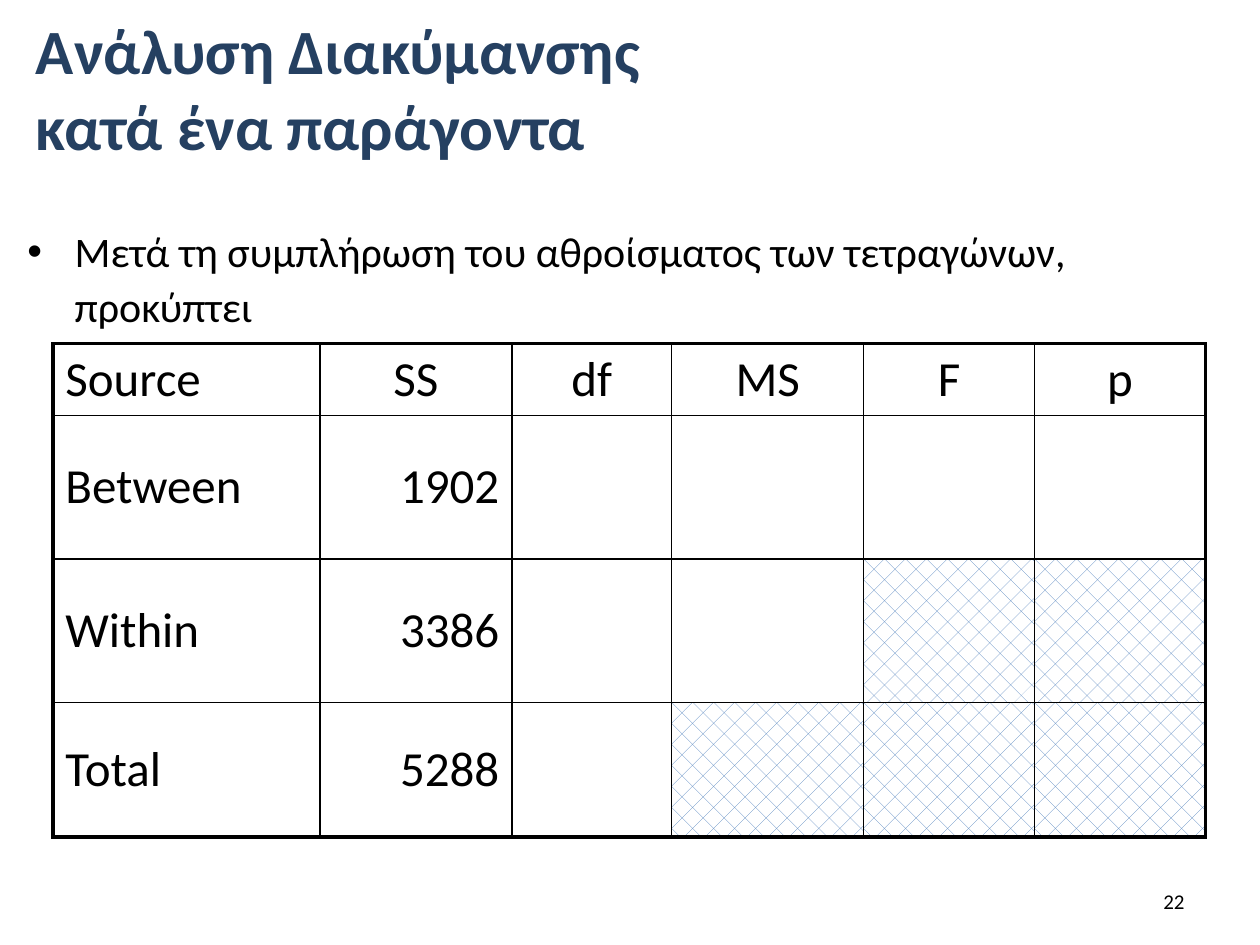
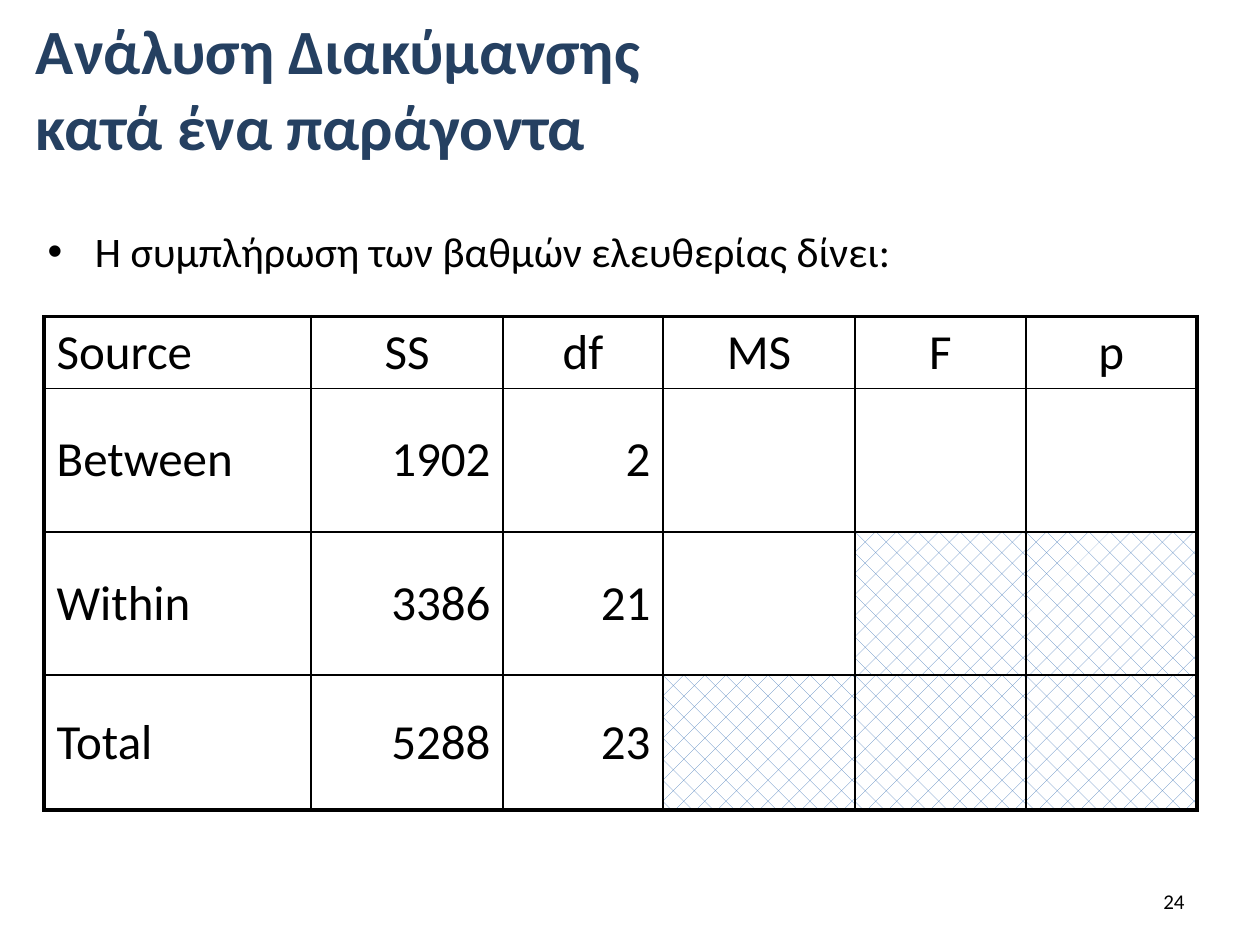
from lxml.etree import SubElement
from pptx import Presentation
from pptx.dml.color import RGBColor
from pptx.enum.dml import MSO_PATTERN
from pptx.enum.text import MSO_ANCHOR, PP_ALIGN
from pptx.oxml.ns import qn
from pptx.util import Pt

NAVY = RGBColor(0x25, 0x40, 0x61)
BLUE = RGBColor(0x4F, 0x81, 0xBD)
BLACK = RGBColor(0, 0, 0)
WHITE = RGBColor(0xFF, 0xFF, 0xFF)
FONT = "Calibri"

TITLE_BOX = (0, 0, 720, 100)
NUMBER_BOX = (516, 500.5, 168, 29)
TITLE_LINES = ("Ανάλυση Διακύμανσης", "κατά ένα παράγοντα")

COLUMN_WIDTHS = (152.6, 109.7, 91.4, 109.7, 97.7, 97.7)
ROW_HEIGHTS = (41, 82, 82, 77)
HEADINGS = ("Source", "SS", "df", "MS", "F", "p")
SOURCES = ("Between", "Within", "Total")
SUMS_OF_SQUARES = ("1902", "3386", "5288")
# First column of each row that is hatched as not applicable
HATCH_FROM = (6, 6, 4, 3)
OUTER, INNER = 2.25, 1


def style_run(r, size, color=BLACK, bold=False):
    values = {"name": FONT, "size": Pt(size), "bold": bold}
    for name, value in values.items():
        setattr(r.font, name, value)
    r.font.color.rgb = color


def add_text_frame(s, box, anchor):
    tf = s.shapes.add_textbox(*map(Pt, box)).text_frame
    tf.word_wrap = True
    tf.vertical_anchor = anchor
    return tf


def set_indent(p, margin, first=0):
    pPr = p._p.get_or_add_pPr()
    pPr.set("marL", str(Pt(margin)))
    pPr.set("indent", str(Pt(first)))
    return pPr


def add_title(s, box):
    p = add_text_frame(s, box, MSO_ANCHOR.MIDDLE).paragraphs[0]
    set_indent(p, 13.5)
    for i, line in enumerate(TITLE_LINES):
        if i:
            p.add_line_break()
        r = p.add_run()
        r.text = line
        style_run(r, 36, NAVY, bold=True)


def add_bullet(s, box, text):
    p = add_text_frame(s, box, MSO_ANCHOR.TOP).paragraphs[0]
    p.line_spacing = 1.1
    p.space_before = Pt(12)
    pPr = set_indent(p, 27, -27)
    SubElement(pPr, qn("a:buFont"), typeface="Arial")
    SubElement(pPr, qn("a:buChar"), char="•")
    r = p.add_run()
    r.text = text
    style_run(r, 24)


def add_page_number(s, box, number):
    p = add_text_frame(s, box, MSO_ANCHOR.MIDDLE).paragraphs[0]
    p.alignment = PP_ALIGN.RIGHT
    r = p.add_run()
    r.text = str(number)
    style_run(r, 12)


def set_borders(cell, row, column):
    """Rule the cell, with heavier lines on the rim of the table."""
    on_rim = {
        "a:lnL": column == 0,
        "a:lnR": column == len(COLUMN_WIDTHS) - 1,
        "a:lnT": row == 0,
        "a:lnB": row == len(ROW_HEIGHTS) - 1,
    }
    tcPr = cell._tc.get_or_add_tcPr()
    for tag, rim in on_rim.items():
        ln = SubElement(tcPr, qn(tag), w=str(Pt(OUTER if rim else INNER)))
        fill = SubElement(ln, qn("a:solidFill"))
        SubElement(fill, qn("a:srgbClr"), val=str(BLACK))


def fill_cell(cell, hatched):
    if hatched:
        cell.fill.patterned()
        cell.fill.pattern = MSO_PATTERN.DIAGONAL_BRICK
        cell.fill.fore_color.rgb = BLUE
        cell.fill.back_color.rgb = WHITE
    else:
        cell.fill.background()


def write_cell(cell, text, row, column):
    cell.vertical_anchor = MSO_ANCHOR.MIDDLE
    if not text:
        return
    p = cell.text_frame.paragraphs[0]
    if column:
        p.alignment = PP_ALIGN.RIGHT if row else PP_ALIGN.CENTER
    r = p.add_run()
    r.text = text
    style_run(r, 28)


def add_anova_table(s, left, top, degrees):
    rows = [HEADINGS]
    for values in zip(SOURCES, SUMS_OF_SQUARES, degrees):
        rows.append(values + ("",) * (len(HEADINGS) - len(values)))
    size = (sum(COLUMN_WIDTHS), sum(ROW_HEIGHTS))
    table = s.shapes.add_table(len(rows), len(HEADINGS),
                               *map(Pt, (left, top, *size))).table
    table.first_row = table.horz_banding = False
    for column, width in zip(table.columns, COLUMN_WIDTHS):
        column.width = Pt(width)
    for row, height in zip(table.rows, ROW_HEIGHTS):
        row.height = Pt(height)
    for i, texts in enumerate(rows):
        for j, text in enumerate(texts):
            cell = table.cell(i, j)
            set_borders(cell, i, j)
            fill_cell(cell, j >= HATCH_FROM[i])
            write_cell(cell, text, i, j)


def add_anova_slide(prs, number, bullet, bullet_left, table_at, degrees):
    s = prs.slides.add_slide(prs.slide_layouts[6])
    add_title(s, TITLE_BOX)
    add_anova_table(s, *table_at, degrees)
    add_bullet(s, (bullet_left, 122.4, 648, 54), bullet)
    add_page_number(s, NUMBER_BOX, number)


def main():
    prs = Presentation()
    prs.slide_width, prs.slide_height = Pt(720), Pt(540)
    add_anova_slide(
        prs, 22,
        "Μετά τη συμπλήρωση του αθροίσματος των τετραγώνων, προκύπτει",
        8.6, (30.2, 196.4), ("", "", ""))
    add_anova_slide(
        prs, 24, "Η συμπλήρωση των βαθμών ελευθερίας δίνει:",
        20.2, (25.2, 180.9), ("2", "21", "23"))
    prs.save("out.pptx")


if __name__ == "__main__":
    main()
